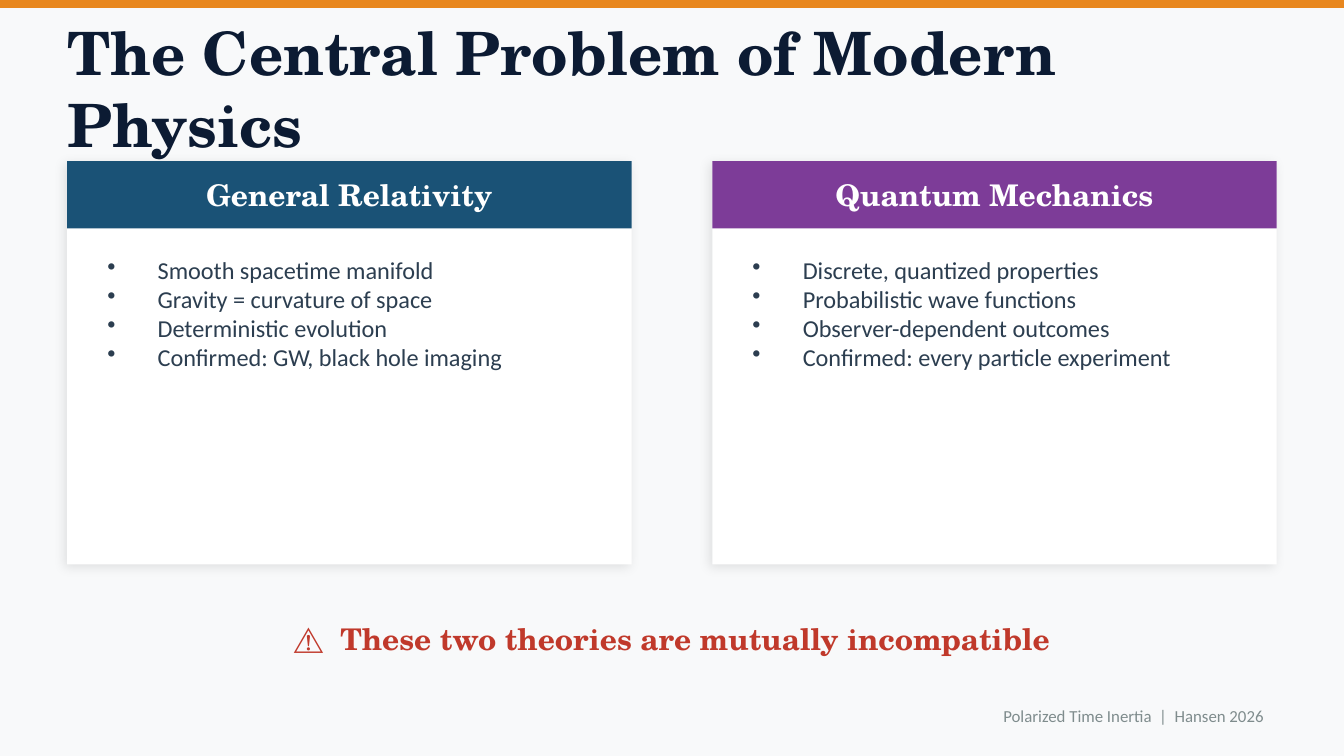
"""Build the slide that contrasts general relativity with quantum mechanics."""
import pptx
import pptx.dml.color
import pptx.enum.shapes
import pptx.enum.text
import pptx.oxml
import pptx.oxml.ns
import pptx.util
from lxml import etree

Pt = pptx.util.Pt
ALIGN = pptx.enum.text.PP_ALIGN
ANCHOR = pptx.enum.text.MSO_ANCHOR
HEADING = "TeX Gyre Schola"
BODY = "Calibri"
SHADOW = (
    f'<a:effectLst {pptx.oxml.ns.nsdecls("a")}>'
    '<a:outerShdw blurRad="76200" dist="25400" dir="8100000" algn="bl" rotWithShape="0">'
    '<a:srgbClr val="000000"><a:alpha val="10000"/></a:srgbClr>'
    "</a:outerShdw></a:effectLst>"
)


def add_block(bounds, color):
    """Add a plain filled rectangle."""
    block = slide.shapes.add_shape(
        pptx.enum.shapes.MSO_SHAPE.RECTANGLE, *[Pt(length) for length in bounds])
    block.shadow.inherit = False
    block.fill.solid()
    block.fill.fore_color.rgb = pptx.dml.color.RGBColor.from_string(color)
    block.line.fill.background()
    return block


def write(shape, lines, color, align, anchor, bulleted=False, **font_format):
    """Fill a shape with formatted paragraphs."""
    frame = shape.text_frame
    frame.word_wrap = True
    frame.auto_size = pptx.enum.text.MSO_AUTO_SIZE.NONE
    frame.vertical_anchor = anchor
    frame.text = "\n".join(lines)
    for paragraph in frame.paragraphs:
        paragraph.alignment = align
        if bulleted:
            properties = paragraph._p.get_or_add_pPr()
            properties.set("marL", str(Pt(27)))
            properties.set("indent", str(-Pt(27)))
            etree.SubElement(properties, pptx.oxml.ns.qn("a:buChar")).set("char", "•")
        for run in paragraph.runs:
            run.font.color.rgb = pptx.dml.color.RGBColor.from_string(color)
            for attribute, value in font_format.items():
                setattr(run.font, attribute, value)


deck = pptx.Presentation()
deck.slide_width, deck.slide_height = Pt(720), Pt(405)
slide = deck.slides.add_slide(deck.slide_layouts[5])
slide.background.fill.solid()
slide.background.fill.fore_color.rgb = pptx.dml.color.RGBColor.from_string("F8F9FA")

add_block((0, 0, 720, 4.32), "E8871E")

title = slide.shapes.title
title_format = {"left": 36, "top": 21.6, "width": 648, "height": 50.4}
for attribute, value in title_format.items():
    setattr(title, attribute, Pt(value))
for margin in ("margin_left", "margin_top", "margin_right", "margin_bottom"):
    setattr(title.text_frame, margin, 0)
write(title, ["The Central Problem of Modern Physics"], "0C1B33", ALIGN.LEFT,
      ANCHOR.MIDDLE, name=HEADING, size=Pt(32), bold=True)

theories = [
    ("General Relativity", "1A5276", [
        "Smooth spacetime manifold",
        "Gravity = curvature of space",
        "Deterministic evolution",
        "Confirmed: GW, black hole imaging",
    ]),
    ("Quantum Mechanics", "7D3C98", [
        "Discrete, quantized properties",
        "Probabilistic wave functions",
        "Observer-dependent outcomes",
        "Confirmed: every particle experiment",
    ]),
]
for column, (theory, theory_color, traits) in enumerate(theories):
    left = 36 + column * 345.6
    card = add_block((left, 86.4, 302.4, 216), "FFFFFF")
    properties = card._element.spPr
    properties.remove(properties.find(pptx.oxml.ns.qn("a:effectLst")))
    properties.append(pptx.oxml.parse_xml(SHADOW))

    header = add_block((left, 86.4, 302.4, 36), theory_color)
    write(header, [theory], "FFFFFF", ALIGN.CENTER, ANCHOR.MIDDLE,
          name=HEADING, size=Pt(16), bold=True)

    trait_list = slide.shapes.add_textbox(Pt(left + 14.4), Pt(133.2), Pt(273.6), Pt(158.4))
    write(trait_list, traits, "2C3E50", ALIGN.LEFT, ANCHOR.TOP, bulleted=True,
          name=BODY, size=Pt(13))

conflict = slide.shapes.add_textbox(Pt(72), Pt(324), Pt(576), Pt(36))
write(conflict, ["⚠  These two theories are mutually incompatible"], "C0392B",
      ALIGN.CENTER, ANCHOR.MIDDLE, name=HEADING, size=Pt(16), bold=True)

footer = slide.shapes.add_textbox(Pt(36), Pt(370.8), Pt(648), Pt(25.2))
write(footer, ["Polarized Time Inertia  |  Hansen 2026"], "7F8C8D",
      ALIGN.RIGHT, ANCHOR.MIDDLE, name=BODY, size=Pt(9))

deck.save("out.pptx")
